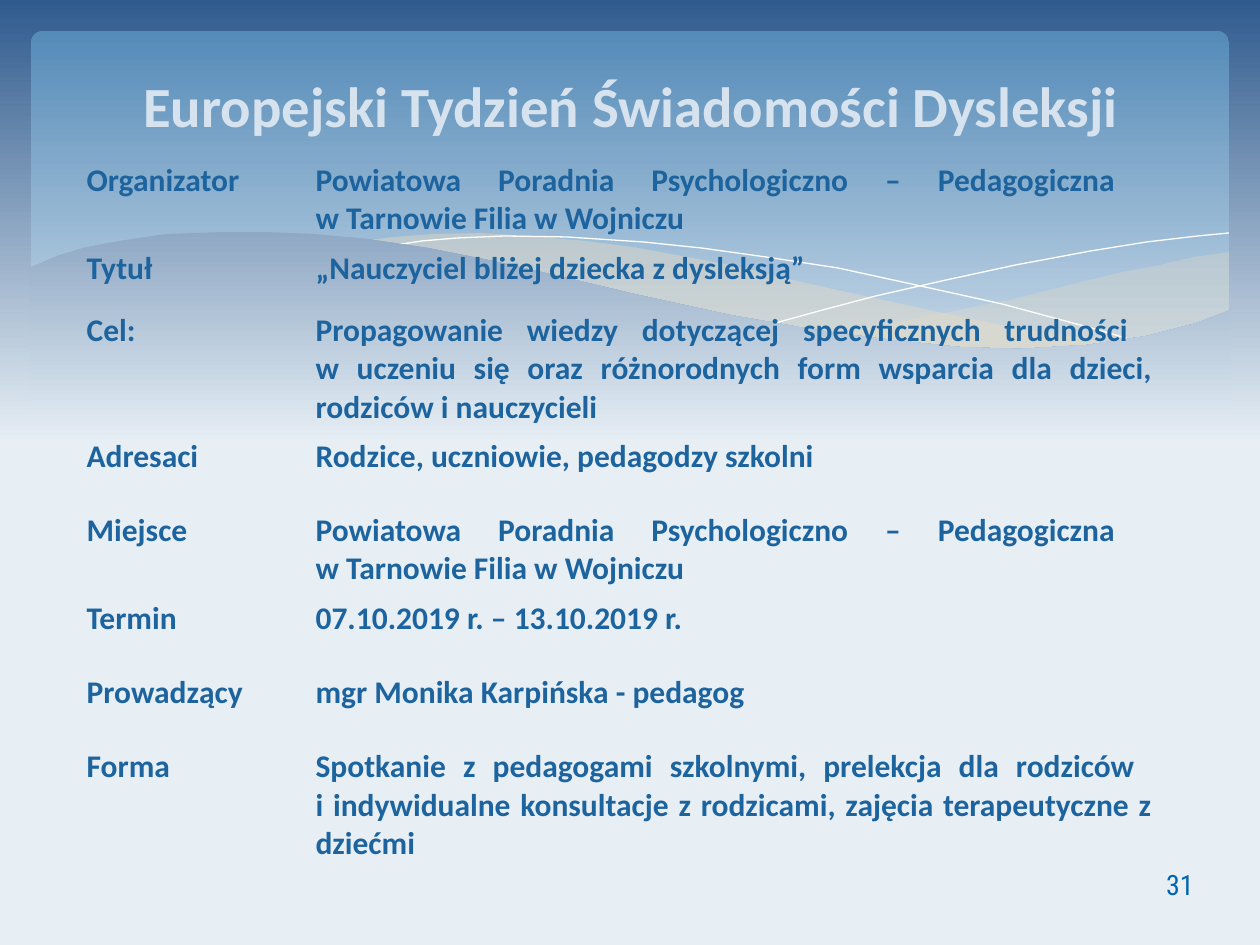
from pptx import Presentation, util as u
from pptx.dml import color
from pptx.enum import shapes, text
from pptx.oxml import ns
from lxml import etree

PX = u.Inches(1) // 126
NO_GRID = "{2D5ABB26-0587-4C30-8999-92F81FD0307C}"

SAND_R = [(1229, 252), (1194, 257), (1160, 265), (1123, 272), (1085, 281), (1014, 299),
          (949, 312), (890, 324), (833, 334), (871, 339), (906, 343), (954, 348),
          (1012, 350), (1076, 348), (1120, 343), (1160, 334), (1196, 324), (1229, 311)]
SAND_L = [(1125, 344), (1091, 339), (1017, 328), (934, 311), (842, 291), (793, 280),
          (736, 266), (682, 256), (633, 247), (586, 241), (529, 236), (479, 233),
          (433, 234), (394, 237), (360, 241), (407, 247), (456, 256), (509, 266),
          (566, 280), (668, 302), (757, 321), (819, 333), (876, 340), (927, 347),
          (989, 350), (1043, 350), (1092, 348)]
FALL = [(389, 246), (422, 241), (457, 238), (505, 236), (567, 237), (643, 242), (701, 248),
        (766, 257), (838, 268), (916, 285), (1002, 304), (1095, 329), (1143, 343)]
RISE = [(772, 324), (823, 310), (876, 296), (942, 281), (1016, 265), (1091, 251),
        (1147, 242), (1198, 236), (1229, 233)]
WAVE = [(1231, 310), (1197, 323), (1147, 336), (1087, 345), (1019, 349), (959, 347),
        (892, 340), (816, 330), (730, 315), (634, 294), (563, 277), (493, 261), (428, 248),
        (368, 239), (315, 234), (266, 232), (223, 232), (166, 234), (120, 241), (84, 248),
        (58, 256), (37, 265), (29, 268), (29, 415), (1231, 415)]

PLACE = "Powiatowa Poradnia Psychologiczno – Pedagogiczna \vw Tarnowie Filia w Wojniczu"
ROWS = [
    ("Organizator", PLACE),
    ("Tytuł", "„Nauczyciel bliżej dziecka z dysleksją”"),
    ("Cel:", "Propagowanie wiedzy dotyczącej specyficznych trudności \v"
             "w uczeniu się oraz różnorodnych form wsparcia dla dzieci, rodziców i nauczycieli"),
    ("Adresaci", "Rodzice, uczniowie, pedagodzy szkolni"),
    ("Miejsce", PLACE),
    ("Termin", "07.10.2019 r. – 13.10.2019 r."),
    ("Prowadzący", "mgr Monika Karpińska - pedagog"),
    ("Forma", "Spotkanie z pedagogami szkolnymi, prelekcja dla rodziców \v"
              "i indywidualne konsultacje z rodzicami, zajęcia terapeutyczne z dziećmi"),
]


def rgb(code):
    return color.RGBColor.from_string(code)


def px(*vals):
    return [v * PX for v in vals]


class Deck:
    title = dict(size=u.Pt(32.4), name="Calibri", bold=True, hue="D6E3EE")
    body = dict(size=u.Pt(18), name="Calibri", bold=True, hue="1D649F")
    page = dict(size=u.Pt(16), name="Roboto Condensed", bold=False, hue="0065B0")

    def __init__(self, wide, high):
        self.prs = Presentation()
        self.prs.slide_width, self.prs.slide_height = px(wide, high)
        self.slide = self.prs.slides.add_slide(self.prs.slide_layouts[6])
        self.items = self.slide.shapes

    def fade(self, fill, top, low, end=1):
        fill.gradient()
        fill.gradient_angle = 270
        for stop, hue, pos in zip(fill.gradient_stops, (top, low), (0, end)):
            stop.color.rgb = rgb(hue)
            stop.position = pos

    def panel(self, box, top, low, end, curve):
        item = self.items.add_shape(shapes.MSO_SHAPE.ROUNDED_RECTANGLE, *px(*box))
        item.adjustments[0] = curve
        item.shadow.inherit = False
        item.line.fill.background()
        self.fade(item.fill, top, low, end)

    def shape(self, pts, close=True):
        pen = self.items.build_freeform(*pts[0], scale=PX)
        pen.add_line_segments(pts[1:], close=close)
        item = pen.convert_to_shape()
        item.shadow.inherit = False
        return item

    def sand(self, pts, hue, alpha):
        item = self.shape(pts)
        item.line.fill.background()
        item.fill.solid()
        item.fill.fore_color.rgb = rgb(hue)
        tone = item._element.spPr.find(".//" + ns.qn("a:srgbClr"))
        etree.SubElement(tone, ns.qn("a:alpha"), val=str(alpha * 1000))

    def curve(self, pts, hue):
        item = self.shape(pts, False)
        item.fill.background()
        item.line.color.rgb = rgb(hue)
        item.line.width = u.Pt(0)

    def wave(self, pts, top, low):
        item = self.shape(pts)
        item.line.fill.background()
        self.fade(item.fill, top, low)

    def put(self, frame, words, style, align):
        frame.text = words
        para = frame.paragraphs[0]
        para.alignment = align
        for run in para.runs:
            for key, val in style.items():
                if key == "hue":
                    run.font.color.rgb = rgb(val)
                else:
                    setattr(run.font, key, val)

    def label(self, box, words, style):
        frame = self.items.add_textbox(*px(*box)).text_frame
        frame.word_wrap = True
        frame.vertical_anchor = text.MSO_ANCHOR.MIDDLE
        self.put(frame, words, style, text.PP_ALIGN.CENTER)

    def table(self, left, top, cols, highs, rows):
        box = px(left, top, sum(cols), sum(highs))
        item = self.items.add_table(len(rows), len(cols), *box)
        grid = item.table
        grid.first_row = grid.horz_banding = False
        item._element.find(".//" + ns.qn("a:tableStyleId")).text = NO_GRID
        for col, wide in zip(grid.columns, cols):
            col.width = wide * PX
        sides = (text.PP_ALIGN.LEFT, text.PP_ALIGN.JUSTIFY)
        for row, high, words in zip(grid.rows, highs, rows):
            row.height = high * PX
            for cell, part, side in zip(row.cells, words, sides):
                cell.fill.background()
                self.put(cell.text_frame, part, self.body, side)


def main():
    deck = Deck(1260, 945)
    deck.fade(deck.slide.background.fill, "305B8E", "E7EFF5", 0.47)
    deck.panel((31, 31, 1198, 340), "558BB8", "BFD3E4", 0.9, 0.034)
    deck.sand(SAND_R, "EBDDC3", 29)
    deck.sand(SAND_L, "EBDDC3", 40)
    for pts in (FALL, RISE):
        deck.curve(pts, "FFFFFF")
    deck.wave(WAVE, "8FA8C4", "DAE5EE")
    deck.label((64, 26, 1134, 158), "Europejski Tydzień Świadomości Dysleksji", deck.title)
    deck.table(74, 155, (229, 862), [74, 62] + [74] * 6, ROWS)
    deck.label((1100, 859, 160, 50), "31", deck.page)
    deck.prs.save("out.pptx")


if __name__ == "__main__":
    main()
